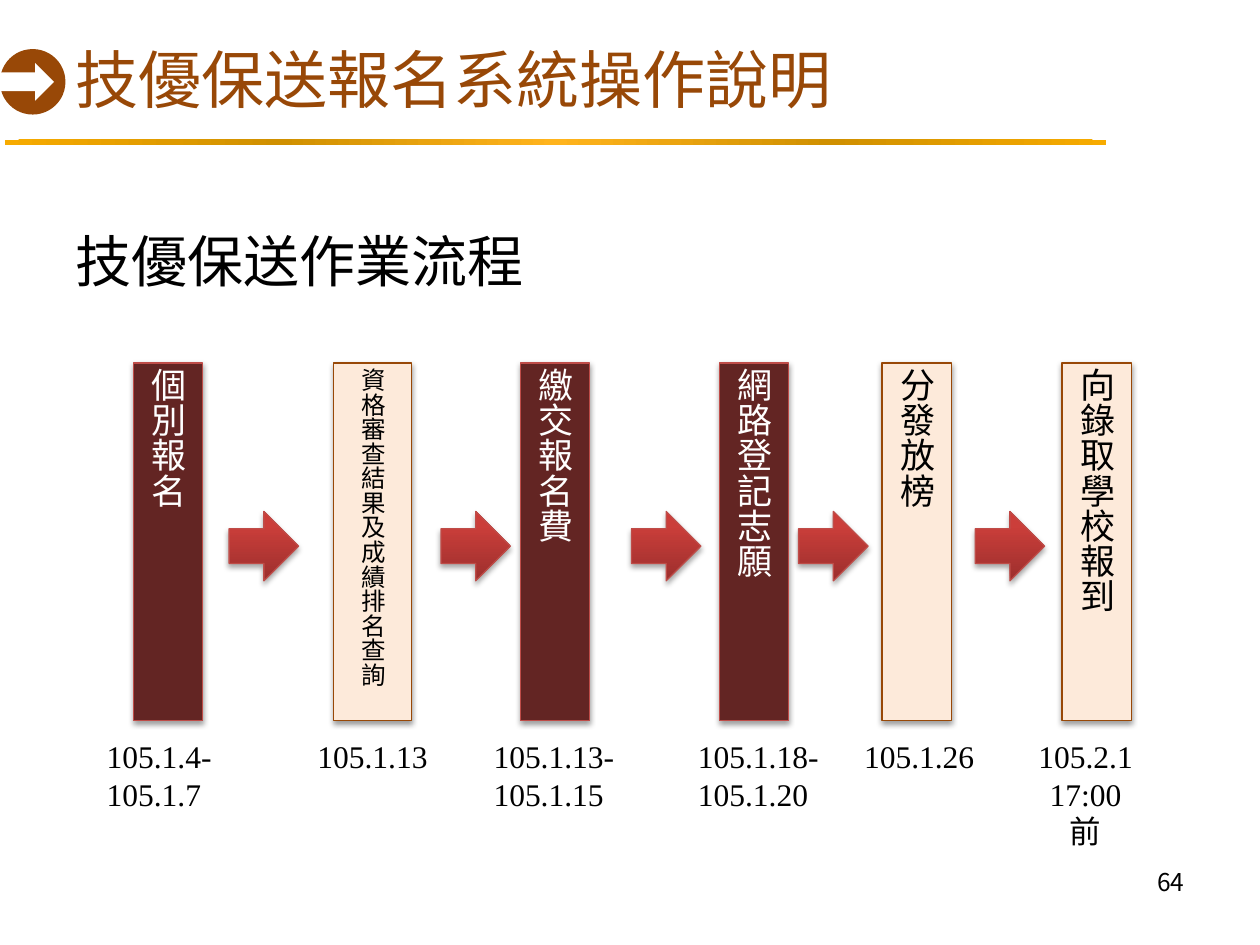
import pptx
import pptx.dml.color
import pptx.enum.shapes
import pptx.enum.text
import pptx.oxml
import pptx.oxml.ns
import pptx.util
from pptx.util import Cm

SHAPE = pptx.enum.shapes.MSO_SHAPE
ALIGN = pptx.enum.text.PP_ALIGN
ANCHOR = pptx.enum.text.MSO_ANCHOR
SANS, SERIF = "Noto Sans CJK SC", "Times New Roman"
COLORS = {
    "brown": "984807", "maroon": "632523", "cream": "FDEADA", "red": "BF4C48",
    "black": "000000", "white": "FFFFFF",
    "gold light": "FFB41D", "gold dark": "D09000", "gold": "F7AB00",
    "arrow dark": "9C2F2D", "arrow mid": "CB3E3A", "arrow light": "CE3B37",
}
RULE_STOPS = [(0, "gold light"), (50, "gold dark"), (100, "gold")]
ARROW_STOPS = [(0, "arrow dark"), (80, "arrow mid"), (100, "arrow light")]
CENTRE_PATH = ('<a:path path="circle"><a:fillToRect l="50000" t="50000" '
               'r="50000" b="50000"/></a:path>')
UPWARD = '<a:lin ang="16200000" scaled="0"/>'

# step, left, width, size, applicant acts, date lines, date left, date width
STEPS = [
    ("個別報名", 2.69, 1.4, 20, True, ["105.1.4-", "105.1.7"], 1.9, 2.64),
    ("資格審查結果及成績排名查詢", 6.73, 1.57, 14, False, ["105.1.13"], 6.15, 2.77),
    ("繳交報名費", 10.49, 1.4, 20, True, ["105.1.13-", "105.1.15"], 9.7, 2.97),
    ("網路登記志願", 14.5, 1.4, 20, True, ["105.1.18-", "105.1.20"], 13.82, 2.97),
    ("分發放榜", 17.78, 1.4, 20, False, ["105.1.26"], 17.17, 2.77),
    ("向錄取學校報到", 21.41, 1.4, 20, False, ["105.2.1", "17:00\v前"], 20.5, 2.77),
]
ARROW_LEFTS = [4.62, 8.89, 12.73, 16.1, 19.66]


def rgb(name):
    return pptx.dml.color.RGBColor.from_string(COLORS[name])


def xml(tag, body, attributes=""):
    namespace = pptx.oxml.ns.nsdecls("a")
    return pptx.oxml.parse_xml(f"<a:{tag} {namespace} {attributes}>{body}</a:{tag}>")


def write(frame, lines, *, size, color="black", font=SANS, align=ALIGN.LEFT,
          anchor=ANCHOR.TOP, wrap=True):
    frame.word_wrap = wrap
    frame.vertical_anchor = anchor
    for number, line in enumerate(lines):
        paragraph = frame.add_paragraph() if number else frame.paragraphs[0]
        paragraph.text = line
        paragraph.alignment = align
        for run in paragraph.runs:
            run.font.size = pptx.util.Pt(size)
            run.font.name = font
            run.font.color.rgb = rgb(color)
            run.font._element.append(xml("ea", "", f'typeface="{SANS}"'))


def add_text(slide, lines, left, top, width, height, **text_format):
    box = slide.shapes.add_textbox(Cm(left), Cm(top), Cm(width), Cm(height))
    write(box.text_frame, lines, **text_format)
    return box


def add_shape(slide, kind, left, top, width, height, fill=None, line=None):
    shape = slide.shapes.add_shape(kind, Cm(left), Cm(top), Cm(width), Cm(height))
    shape.shadow.inherit = False
    if fill:
        shape.fill.solid()
        shape.fill.fore_color.rgb = rgb(fill)
    if line:
        shape.line.color.rgb = rgb(line)
        shape.line.width = pptx.util.Pt(0.75)
    else:
        shape.line.fill.background()
    return shape


def set_gradient(shape, stops, direction):
    marks = "".join(f'<a:gs pos="{place * 1000}"><a:srgbClr val="{COLORS[name]}"/></a:gs>'
                    for place, name in stops)
    geometry = shape._element.spPr.find(pptx.oxml.ns.qn("a:prstGeom"))
    geometry.addnext(xml("gradFill", f"<a:gsLst>{marks}</a:gsLst>{direction}",
                         'rotWithShape="1"'))


def drop_shadow(shape, distance, opacity):
    effects = shape._element.spPr.find(pptx.oxml.ns.qn("a:effectLst"))
    tint = f'<a:srgbClr val="{COLORS["black"]}"><a:alpha val="{opacity * 1000}"/></a:srgbClr>'
    effects.append(xml("outerShdw", tint, f'blurRad="40000" dist="{distance}" '
                       'dir="5400000" rotWithShape="0"'))


def add_step(slide, name, left, width, size, by_applicant):
    fill, line, color = (("maroon", "red", "white") if by_applicant
                         else ("cream", "brown", "black"))
    step = add_shape(slide, SHAPE.RECTANGLE, left, 7.32, width, 7.21, fill, line)
    drop_shadow(step, 20000, 38)
    frame = step.text_frame
    frame.margin_left = frame.margin_right = Cm(0.1)
    frame.margin_top = frame.margin_bottom = Cm(0.1)
    write(frame, [name], size=size, color=color, align=ALIGN.CENTER, anchor=ANCHOR.MIDDLE)
    frame._txBody.bodyPr.set("vert", "eaVert")


def add_date(slide, lines, left, width, align):
    height = 1.02 if len(lines) == 1 else 1.8
    date = add_text(slide, lines, left, 14.73, width, height, size=18, font=SERIF,
                    align=align, wrap=False)
    date.text_frame.auto_size = pptx.enum.text.MSO_AUTO_SIZE.SHAPE_TO_FIT_TEXT


def add_arrow(slide, left):
    arrow = add_shape(slide, SHAPE.RIGHT_ARROW, left, 10.31, 1.4, 1.4, line="red")
    set_gradient(arrow, ARROW_STOPS, UPWARD)
    drop_shadow(arrow, 23000, 35)


def add_heading(slide):
    rule = add_shape(slide, SHAPE.RECTANGLE, 0.1, 2.82, 22.2, 0.1)
    set_gradient(rule, RULE_STOPS, CENTRE_PATH)
    add_text(slide, ["技優保送報名系統操作說明"], 1.27, 0.76, 22.86, 1.63,
             size=36, color="brown", anchor=ANCHOR.MIDDLE)
    add_shape(slide, SHAPE.OVAL, 0, 0.99, 1.32, 1.32, "brown")
    add_shape(slide, SHAPE.RIGHT_ARROW, 0, 1.27, 1.09, 0.76, "white")


def main():
    deck = pptx.Presentation()
    deck.slide_width, deck.slide_height = Cm(25.4), Cm(19.05)
    slide = deck.slides.add_slide(deck.slide_layouts[6])
    add_heading(slide)
    add_text(slide, ["技優保送作業流程"], 1.27, 4.45, 22.86, 1.5, size=32)
    for name, left, width, size, by_applicant, dates, date_left, date_width in STEPS:
        add_step(slide, name, left, width, size, by_applicant)
        last = name == STEPS[-1][0]
        add_date(slide, dates, date_left, date_width, ALIGN.CENTER if last else ALIGN.LEFT)
    for left in ARROW_LEFTS:
        add_arrow(slide, left)
    add_text(slide, ["64"], 18.21, 17.35, 5.92, 1.32, size=14, align=ALIGN.RIGHT)
    deck.save("out.pptx")


if __name__ == "__main__":
    main()
